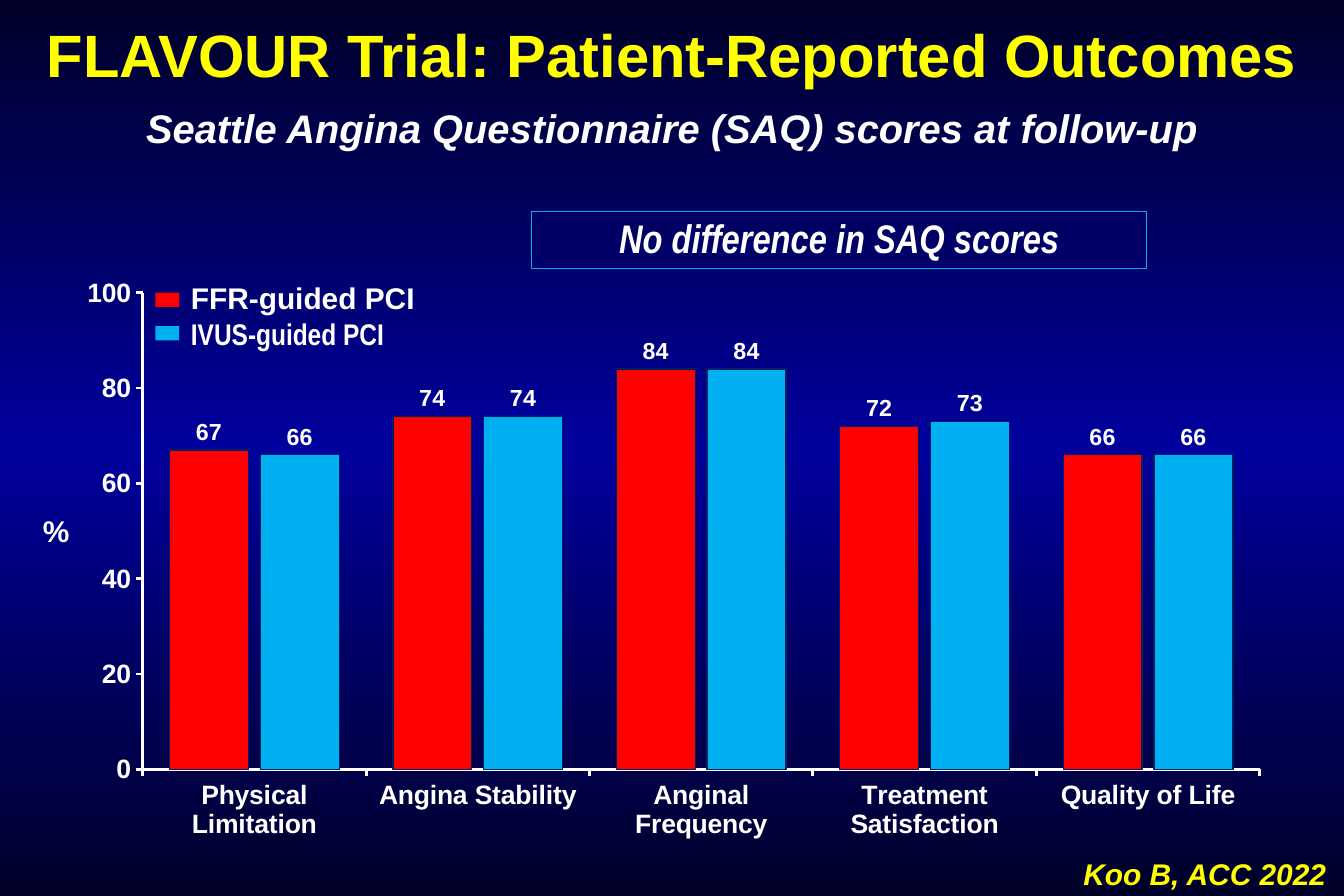
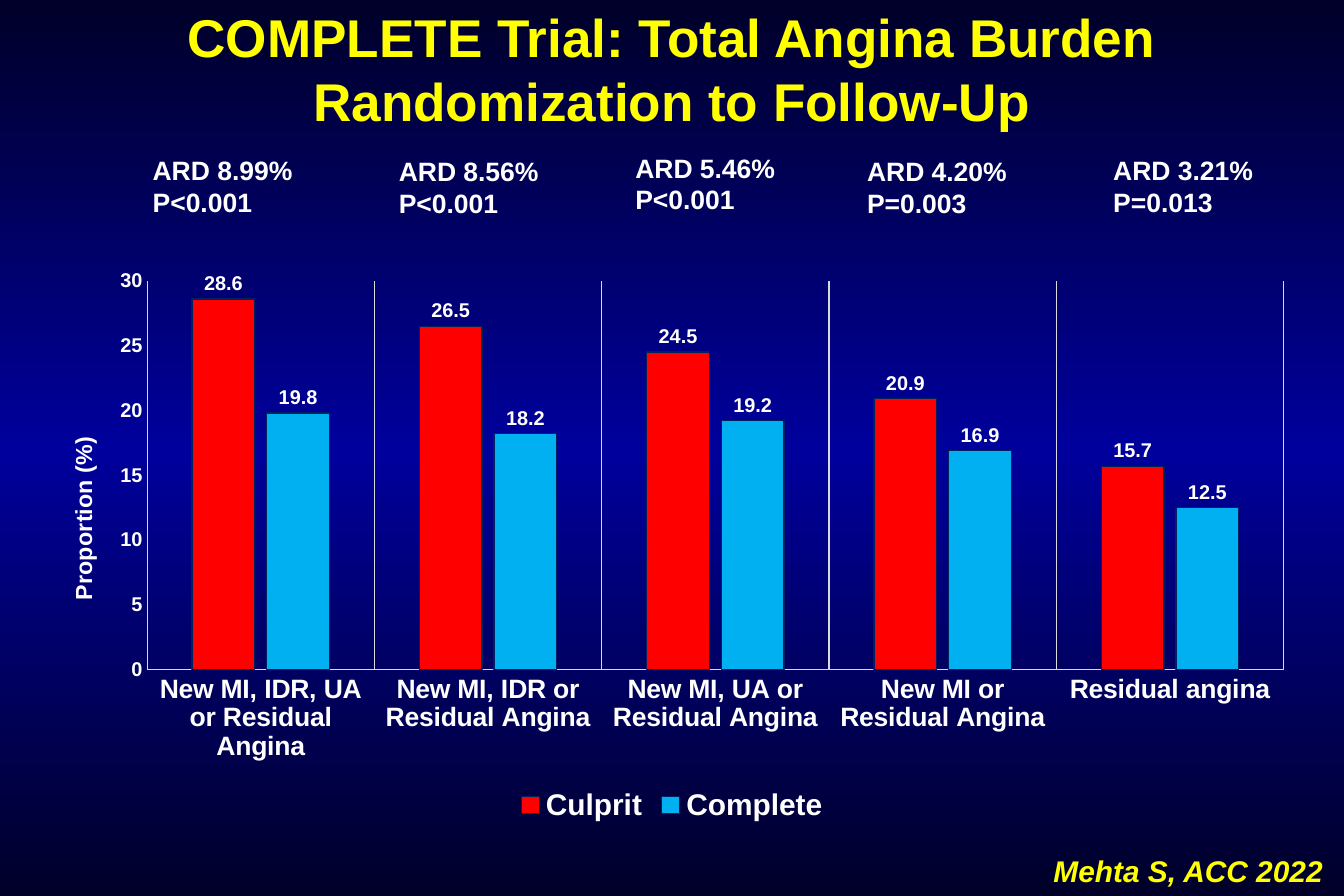
from copy import deepcopy
from dataclasses import dataclass

from lxml import etree
from pptx import Presentation
from pptx.chart.data import CategoryChartData
from pptx.dml.color import RGBColor
from pptx.enum.chart import (XL_CHART_TYPE, XL_LABEL_POSITION,
                             XL_LEGEND_POSITION, XL_TICK_MARK)
from pptx.enum.shapes import MSO_SHAPE
from pptx.enum.text import MSO_ANCHOR, PP_ALIGN
from pptx.oxml.ns import qn
from pptx.util import Inches, Pt

COLUMNS = XL_CHART_TYPE.COLUMN_CLUSTERED
OUTSIDE_END = XL_LABEL_POSITION.OUTSIDE_END
TICK_OUT, TICK_NONE = XL_TICK_MARK.OUTSIDE, XL_TICK_MARK.NONE
RECTANGLE = MSO_SHAPE.RECTANGLE
LEFT, CENTER = PP_ALIGN.LEFT, PP_ALIGN.CENTER
TOP, MIDDLE = MSO_ANCHOR.TOP, MSO_ANCHOR.MIDDLE


@dataclass(frozen=True)
class Theme:
    edge: str = "000028"
    glow: str = "00009C"
    accent: str = "FFFF00"
    text: str = "FFFFFF"
    grid: str = "D9D9D9"
    outline: str = "002060"
    red: str = "FF0000"
    blue: str = "00B0F0"
    font: str = "Arial"
    narrow: str = "Arial Narrow"
    title: int = 36
    long_title: int = 32
    subtitle: int = 24
    body: int = 18
    label: int = 16
    value: int = 14
    small: int = 12
    hairline: float = 0.75
    axis_line: float = 1.75


THEME = Theme()
SERIES_COLORS = (THEME.red, THEME.blue)
SLIDE_WIDTH, SLIDE_HEIGHT = 11.25, 7.5

# Content: boxes are left, top, width, height in inches;
# plot areas are fractions of the chart
FLAVOUR = {
    "title": "FLAVOUR Trial: Patient-Reported Outcomes",
    "subtitle": "Seattle Angina Questionnaire (SAQ) scores at follow-up",
    "finding": "No difference in SAQ scores",
    "unit": "%",
    "source": "Koo B, ACC 2022",
    "legend": [("FFR-guided PCI", THEME.font), ("IVUS-guided PCI", THEME.narrow)],
    "chart": {
        "box": (0.53, 2.24, 10.22, 4.89),
        "plot": (0.065, 0.043, 0.915, 0.816),
        "categories": ["Physical Limitation", "Angina Stability", "Anginal Frequency",
                       "Treatment Satisfaction", "Quality of Life"],
        "series": [("Series 1", (67, 74, 84, 72, 66)),
                   ("Series 2", (66, 74, 84, 73, 66))],
        "gap": 68, "overlap": -15, "maximum": 100, "step": 20,
        "tick": TICK_OUT, "scale_size": THEME.label, "value_size": THEME.value,
        "axis_color": THEME.text, "axis_width": THEME.axis_line,
    },
}
COMPLETE = {
    "title": "COMPLETE Trial: Total Angina Burden Randomization to Follow-Up",
    "axis_title": "Proportion (%)",
    "source": "Mehta S, ACC 2022",
    "differences": [
        (1.18, 1.24, "ARD 8.99%", "P<0.001"),
        (3.24, 1.25, "ARD 8.56%", "P<0.001"),
        (5.22, 1.22, "ARD 5.46%", "P<0.001"),
        (7.16, 1.25, "ARD 4.20%", "P=0.003"),
        (9.22, 1.24, "ARD 3.21%", "P=0.013"),
    ],
    "chart": {
        "box": (0.28, 2.17, 10.69, 4.76),
        "plot": (0.089, 0.038, 0.89, 0.684),
        "categories": ["New MI, IDR, UA or Residual Angina", "New MI, IDR or Residual Angina",
                       "New MI, UA or Residual Angina", "New MI or Residual Angina",
                       "Residual angina"],
        "series": [("Culprit", (28.6, 26.5, 24.5, 20.9, 15.7)),
                   ("Complete", (19.8, 18.2, 19.2, 16.9, 12.5))],
        "gap": 143, "overlap": -19, "maximum": 30, "step": 5,
        "tick": TICK_NONE, "scale_size": THEME.small, "value_size": THEME.small,
        "axis_color": THEME.grid, "axis_width": THEME.hairline,
    },
}


# Text and shapes
def rgb(color):
    return RGBColor.from_string(color)


def style_font(font, size, color=THEME.text, name=THEME.font, italic=False):
    font.name, font.size = name, Pt(size)
    font.bold, font.italic = True, italic
    font.color.rgb = rgb(color)


def style_line(line, color, width):
    line.color.rgb = rgb(color)
    line.width = Pt(width)


def write(shape, lines, size, align=LEFT, anchor=TOP, spacing=None, inset=True, **font):
    frame = shape.text_frame
    frame.word_wrap = True
    frame.vertical_anchor = anchor
    if not inset:
        frame.margin_left = frame.margin_right = 0
        frame.margin_top = frame.margin_bottom = 0
    for index, line in enumerate(lines):
        para = frame.add_paragraph() if index else frame.paragraphs[0]
        para.alignment = align
        if spacing:
            para.line_spacing = spacing
        span = para.add_run()
        span.text = line
        style_font(span.font, size, **font)


def add_text(shapes, box, lines, size, **style):
    write(shapes.add_textbox(*map(Inches, box)), lines, size, **style)


def add_rectangle(shapes, box, fill=None, line=None):
    shape = shapes.add_shape(RECTANGLE, *map(Inches, box))
    shape.shadow.inherit = False
    if fill:
        shape.fill.solid()
        shape.fill.fore_color.rgb = rgb(fill)
    else:
        shape.fill.background()
    if line:
        style_line(shape.line, line, THEME.hairline)
    else:
        shape.line.fill.background()
    return shape


def add_source(page, text, box):
    add_text(page.shapes, box, [text], THEME.body, color=THEME.accent, italic=True)


# Charts
def make_layout(**settings):
    layout = etree.Element(qn("c:layout"))
    manual = etree.SubElement(layout, qn("c:manualLayout"))
    for tag, value in settings.items():
        etree.SubElement(manual, qn(f"c:{tag}")).set("val", str(value))
    return layout


def place_plot(chart, plot_box):
    x, y, w, h = plot_box
    area = chart.element.find(".//" + qn("c:plotArea"))
    for old in area.findall(qn("c:layout")):
        area.remove(old)
    area.insert(0, make_layout(layoutTarget="inner", xMode="edge", yMode="edge",
                               x=x, y=y, w=w, h=h))


def add_columns(page, data):
    chart_data = CategoryChartData()
    chart_data.categories = data["categories"]
    for name, values in data["series"]:
        chart_data.add_series(name, values)
    chart = page.shapes.add_chart(COLUMNS, *map(Inches, data["box"]), chart_data).chart
    chart.has_title = chart.has_legend = False
    style_font(chart.font, THEME.label)
    place_plot(chart, data["plot"])

    plot = chart.plots[0]
    plot.gap_width, plot.overlap = data["gap"], data["overlap"]
    plot.vary_by_categories = False
    for series, color in zip(plot.series, SERIES_COLORS):
        series.format.fill.solid()
        series.format.fill.fore_color.rgb = rgb(color)
        style_line(series.format.line, THEME.outline, THEME.hairline)
        labels = series.data_labels
        labels.show_value = True
        labels.position = OUTSIDE_END
        style_font(labels.font, data["value_size"])

    scale = chart.value_axis
    scale.minimum_scale, scale.maximum_scale = 0, data["maximum"]
    scale.major_unit = data["step"]
    for axis, size in ((chart.category_axis, THEME.label), (scale, data["scale_size"])):
        axis.has_major_gridlines = False
        axis.major_tick_mark, axis.minor_tick_mark = data["tick"], TICK_NONE
        style_font(axis.tick_labels.font, size)
        style_line(axis.format.line, data["axis_color"], data["axis_width"])
    return chart


def add_axis_title(axis, text, x, y):
    frame = axis.axis_title.text_frame
    span = frame.paragraphs[0].add_run()
    span.text = text
    style_font(span.font, THEME.value)
    title = axis.axis_title._element
    body = title.find(".//" + qn("a:bodyPr"))
    body.set("rot", "-5400000")
    body.set("vert", "horz")
    for old in title.findall(qn("c:layout")):
        title.remove(old)
    title.find(qn("c:tx")).addnext(make_layout(xMode="edge", yMode="edge", x=x, y=y))


# Slides
def paint_background(master):
    fill = master.background.fill
    fill.gradient()
    fill.gradient_angle = 90
    stop_list = master.element.find(".//" + qn("a:gsLst"))
    stop_list.append(deepcopy(stop_list[0]))
    stops = ((0, THEME.edge), (0.5, THEME.glow), (1, THEME.edge))
    for stop, (position, color) in zip(fill.gradient_stops, stops):
        stop.position = position
        stop.color.rgb = rgb(color)


def build_flavour(page):
    content = FLAVOUR
    add_text(page.shapes, (0, 0.03, SLIDE_WIDTH, 0.91), [content["title"]], THEME.title,
             align=CENTER, anchor=MIDDLE, spacing=0.9, color=THEME.accent)
    add_text(page.shapes, (0, 0.86, SLIDE_WIDTH, 0.39), [content["subtitle"]],
             THEME.subtitle, align=CENTER, spacing=0.9, italic=True)
    add_columns(page, content["chart"])

    # Legend beside the scale
    legend = page.shapes.add_group_shape().shapes
    for row, ((label, font), color) in enumerate(zip(content["legend"], SERIES_COLORS)):
        add_rectangle(legend, (1.3, 2.45 + 0.28 * row, 0.2, 0.12), fill=color)
        add_text(legend, (1.5, 2.29 + 0.3 * row, 2.2, 0.4), [label], THEME.body, name=font)

    finding = add_rectangle(page.shapes, (4.45, 1.77, 5.15, 0.48), line=THEME.blue)
    write(finding, [content["finding"]], THEME.subtitle, align=CENTER, anchor=MIDDLE,
          spacing=0.9, name=THEME.narrow, italic=True)
    add_text(page.shapes, (0.22, 4.24, 0.5, 0.4), [content["unit"]], THEME.body,
             align=CENTER)
    add_source(page, content["source"], (8.97, 7.11, 2.28, 0.4))


def build_complete(page):
    content = COMPLETE
    add_text(page.shapes, (0, 0.04, SLIDE_WIDTH, 1.12), [content["title"]],
             THEME.long_title, align=CENTER, inset=False, color=THEME.accent)
    chart = add_columns(page, content["chart"])
    add_axis_title(chart.value_axis, content["axis_title"], 0.024, 0.304)
    chart.value_axis.format.line.fill.background()
    chart.category_axis.has_major_gridlines = True
    style_line(chart.category_axis.major_gridlines.format.line, THEME.grid, THEME.hairline)
    chart.has_legend = True
    chart.legend.position = XL_LEGEND_POSITION.BOTTOM
    chart.legend.include_in_layout = False
    style_font(chart.legend.font, THEME.body)

    # Risk difference above each pair of columns
    for left, top, *lines in content["differences"]:
        add_text(page.shapes, (left, top, 1.43, 0.64), lines, THEME.label)
    add_source(page, content["source"], (8.72, 7.09, 2.46, 0.4))


def main():
    deck = Presentation()
    deck.slide_width, deck.slide_height = Inches(SLIDE_WIDTH), Inches(SLIDE_HEIGHT)
    paint_background(deck.slide_master)
    for build in (build_flavour, build_complete):
        build(deck.slides.add_slide(deck.slide_layouts[6]))
    deck.save("out.pptx")


if __name__ == "__main__":
    main()
